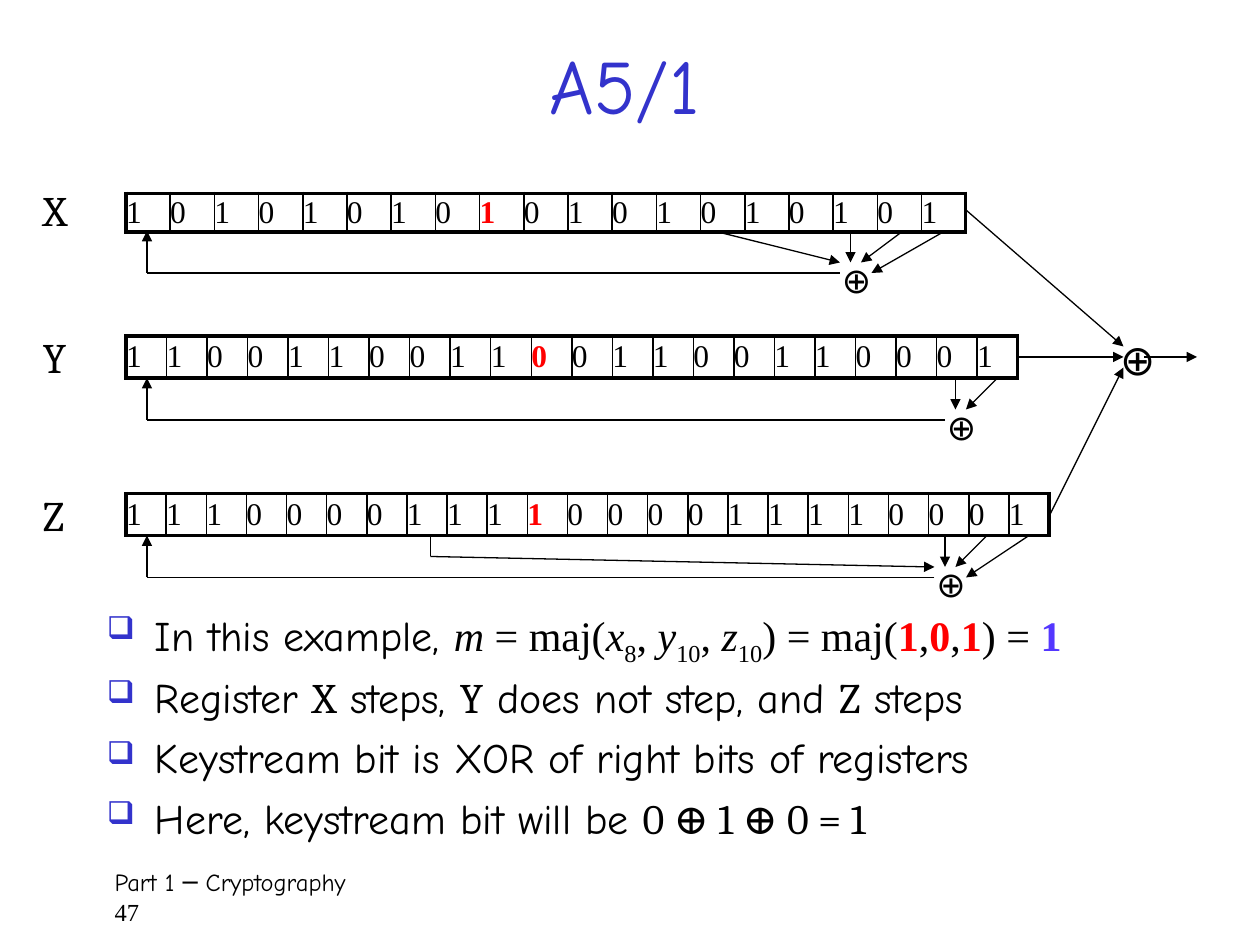
from lxml.etree import SubElement
from pptx import Presentation
from pptx.dml.color import RGBColor
from pptx.enum.shapes import MSO_CONNECTOR
from pptx.enum.text import MSO_ANCHOR, PP_ALIGN
from pptx.oxml.ns import qn
from pptx.util import Inches, Pt

BLACK = RGBColor(0, 0, 0)
BLUE = RGBColor(0x33, 0x33, 0xCC)
RED = RGBColor(0xFF, 0, 0)
VIOLET = RGBColor(0x54, 0x37, 0xFF)
COMIC, SERIF, ROMAN = "Comic Neue", "Cambria", "Times New Roman"
GRID = 12

REGS = [
    ("X", 17, 18.4, 3.7, 80, "1010101010101010101", 8),
    ("Y", 31, 32, 4, 85, "1100110011001100110001", 10),
    ("Z", 46, 47, 4, 88, "11100001111000011110001", 10),
]
XORS = [(79, 24, 5, 20), (89, 38, 5, 20), (88, 53, 5, 20), (105.5, 31.2, 5.5, 24)]
ARROWS = [
    (81, 22, 81, 25), (86, 22, 82, 25), (90, 22, 83, 26), (68, 22, 80, 25),
    (91, 36, 91, 39), (95, 36, 92, 39),
    (90, 51, 90, 54), (94, 51, 91, 54), (98, 51, 92, 55), (41, 53, 89, 54),
    (92, 20, 107, 33), (97, 34, 107, 34), (100, 49, 107, 35), (109, 34, 114, 34),
]
LOOPS = [(80, 26, 22), (90, 40, 36), (89, 55, 51)]

STYLES = {
    "text": (COMIC, {}),
    "name": (SERIF, {}),
    "math": (ROMAN, {}),
    "var": (ROMAN, {"ital": True}),
    "sub": (ROMAN, {"sub": True}),
    "hot": (ROMAN, {"color": RED, "bold": True}),
    "out": (ROMAN, {"color": VIOLET, "bold": True}),
}
POINTS = [
    [("In this example, ", "text"), ("m", "var"), (" = maj(", "math"),
     ("x", "var"), ("8", "sub"), (", ", "math"), ("y", "var"), ("10", "sub"),
     (", ", "math"), ("z", "var"), ("10", "sub"), (") = maj(", "math"),
     ("1", "hot"), (",", "math"), ("0", "hot"), (",", "math"), ("1", "hot"),
     (") = ", "math"), ("1", "out")],
    [("Register ", "text"), ("X", "name"), (" steps, ", "text"), ("Y", "name"),
     (" does not step, and ", "text"), ("Z", "name"), (" steps", "text")],
    [("Keystream bit is XOR of right bits of registers", "text")],
    [("Here, keystream bit will be ", "text"), ("0 ⊕ 1 ⊕ 0 = 1", "name")],
]


def unit(num):
    return Inches(num / GRID)


def add_run(para, text, face, size, color=BLACK, bold=False, ital=False, sub=False):
    run = para.add_run()
    run.text = text
    font = run.font
    font.name, font.size = face, Pt(size)
    font.bold, font.italic = bold, ital
    font.color.rgb = color
    if sub:
        run._r.get_or_add_rPr().set("baseline", "-25000")


def add_box(slide, left, top, wide, high, wrap=True):
    box = slide.shapes.add_textbox(unit(left), unit(top), unit(wide), unit(high))
    box.text_frame.word_wrap = wrap
    return box.text_frame


def add_label(slide, left, top, wide, text, face, size):
    frame = add_box(slide, left, top, wide, 6, wrap=False)
    add_run(frame.paragraphs[0], text, face, size)


def add_line(slide, left, top, right, low, head=True):
    line = slide.shapes.add_connector(
        MSO_CONNECTOR.STRAIGHT, unit(left), unit(top), unit(right), unit(low))
    line.line.color.rgb = BLACK
    line.line.width = Pt(0.75)
    if head:
        SubElement(line.line._get_or_add_ln(), qn("a:tailEnd"), type="triangle")
    SubElement(line._element.spPr, qn("a:effectLst"))


def add_edge(cell, side, width):
    edge = SubElement(cell._tc.get_or_add_tcPr(), qn("a:ln" + side), w=str(Pt(width)))
    fill = SubElement(edge, qn("a:solidFill"))
    SubElement(fill, qn("a:srgbClr"), val=str(BLACK))


def add_bits(slide, top, high, wide, bits, hot):
    count = len(bits)
    table = slide.shapes.add_table(
        1, count, unit(12), unit(top), unit(wide), unit(high)).table
    table.first_row = table.horz_banding = False
    for col, bit in enumerate(bits):
        table.columns[col].width = unit(wide / count)
        cell = table.cell(0, col)
        cell.margin_left = cell.margin_right = 0
        cell.margin_top = cell.margin_bottom = 0
        cell.vertical_anchor = MSO_ANCHOR.MIDDLE
        add_edge(cell, "L", 2.25 if col == 0 else 1)
        add_edge(cell, "R", 2.25 if col == count - 1 else 1)
        add_edge(cell, "T", 2.25)
        add_edge(cell, "B", 2.25)
        cell.fill.background()
        color = RED if col == hot else BLACK
        add_run(cell.text_frame.paragraphs[0], bit, ROMAN, 18, color, col == hot)


def add_bullet(para):
    props = para._p.get_or_add_pPr()
    props.set("marL", str(Inches(0.38)))
    props.set("indent", str(Inches(-0.38)))
    para.line_spacing = 0.8
    para.space_before, para.space_after = Pt(5.5), Pt(6)
    tint = SubElement(props, qn("a:buClr"))
    SubElement(tint, qn("a:srgbClr"), val=str(BLUE))
    SubElement(props, qn("a:buSzPct"), val="75000")
    SubElement(props, qn("a:buChar"), char="❑")


def add_points(slide):
    frame = add_box(slide, 9, 58, 102, 23)
    for row, parts in enumerate(POINTS):
        para = frame.add_paragraph() if row else frame.paragraphs[0]
        add_bullet(para)
        for text, style in parts:
            face, look = STYLES[style]
            add_run(para, text, face, 24, **look)


def add_title(slide):
    frame = add_box(slide, 9, 4, 101, 8)
    frame.vertical_anchor = MSO_ANCHOR.MIDDLE
    para = frame.paragraphs[0]
    para.alignment = PP_ALIGN.CENTER
    add_run(para, "A5/1", COMIC, 44, BLUE)


def add_footer(slide):
    frame = add_box(slide, 9, 82, 103, 6)
    frame.margin_left = Inches(0.16)
    add_run(frame.paragraphs[0], "Part 1 ─ Cryptography", COMIC, 14)
    add_run(frame.add_paragraph(), "47", ROMAN, 14)


def main():
    deck = Presentation()
    deck.slide_width, deck.slide_height = Inches(10), Inches(7.5)
    slide = deck.slides.add_slide(deck.slide_layouts[6])
    add_footer(slide)
    add_title(slide)
    add_points(slide)
    for name, low, top, high, wide, bits, hot in REGS:
        add_label(slide, 2.9, low, 5, name, SERIF, 24)
        add_bits(slide, top, high, wide, bits, hot)
    for left, top, wide, size in XORS:
        add_label(slide, left, top, wide, "⊕", COMIC, size)
    for ends in ARROWS:
        add_line(slide, *ends)
    for right, low, top in LOOPS:
        add_line(slide, right, low, 14, low, head=False)
        add_line(slide, 14, low, 14, top)
    add_line(slide, 41, 51, 41, 53, head=False)
    deck.save("out.pptx")


if __name__ == "__main__":
    main()
